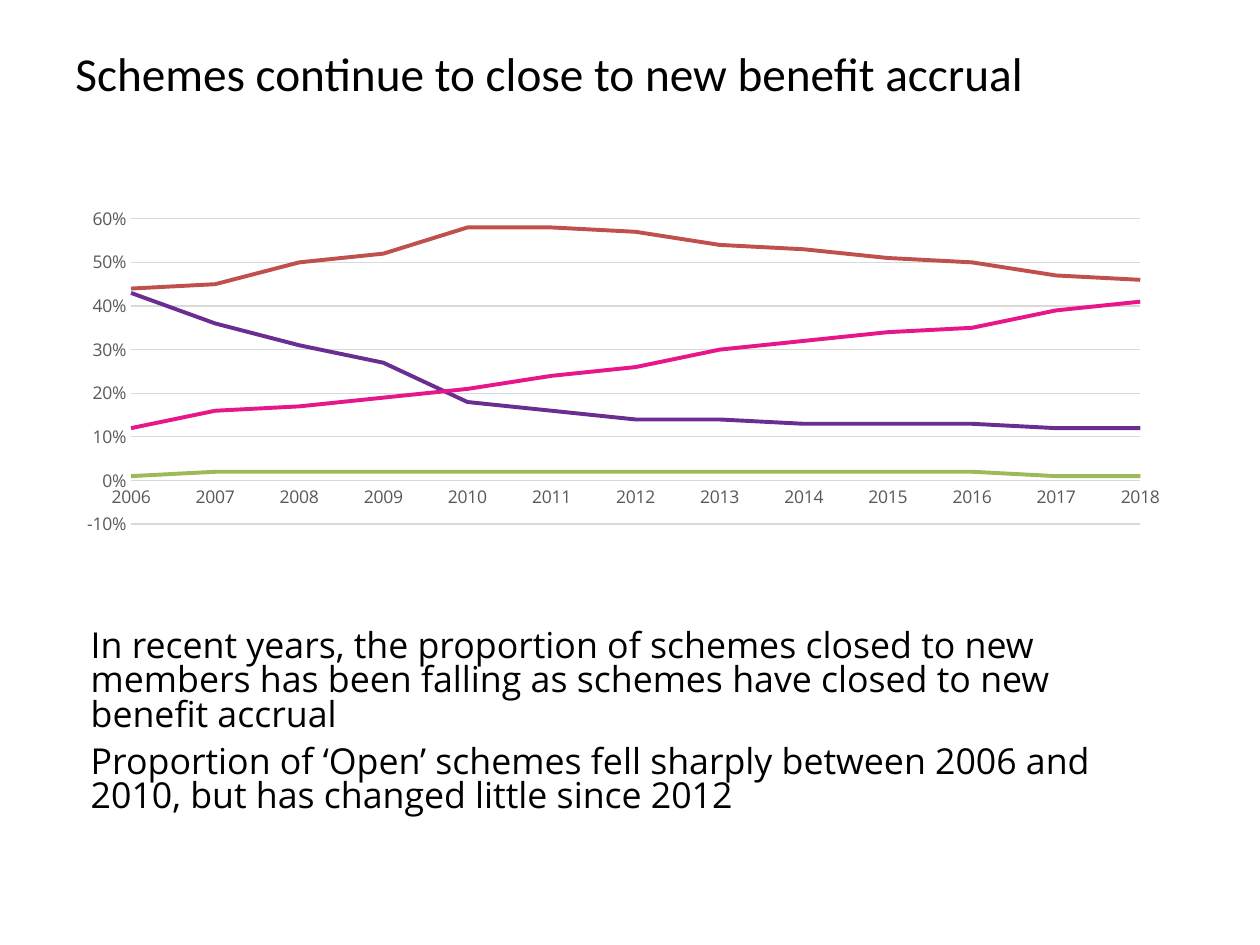
from lxml import etree
from pptx import Presentation
from pptx import util as u
from pptx.chart.data import CategoryChartData
from pptx.dml.color import RGBColor
from pptx.enum import chart as charts, text
from pptx.oxml.ns import qn


def colour(value):
    return RGBColor.from_string(value)


def assign(target, values):
    for name, value in values.items():
        setattr(target, name, value)


class Slide:
    columns, rows = 100, 75
    ink, label, rule = "000000", "595959", "D9D9D9"
    heading_font, body_font = "Calibri", "Open Sans"

    def __init__(self, deck):
        self.deck = deck
        self.page = deck.slides.add_slide(deck.slide_layouts[6])

    def area(self, column, row, width, height):
        across = self.deck.slide_width / self.columns
        down = self.deck.slide_height / self.rows
        return [round(n * unit) for n, unit in
                zip((column, row, width, height), (across, down, across, down))]

    def style_font(self, font, name, size, ink):
        assign(font, {"name": name, "size": u.Pt(size), "bold": False})
        font.color.rgb = colour(ink)

    def add_text(self, place, lines, font, size, frame_format, paragraph_format):
        frame = self.page.shapes.add_textbox(*self.area(*place)).text_frame
        assign(frame, {"word_wrap": True, "vertical_anchor": text.MSO_ANCHOR.TOP,
                       **frame_format})
        for index, line in enumerate(lines):
            para = frame.add_paragraph() if index else frame.paragraphs[0]
            assign(para, paragraph_format)
            if not index:
                para.space_before = u.Pt(0)
            span = para.add_run()
            span.text = line
            self.style_font(span.font, font, size, self.ink)

    def add_line_chart(self, place, categories, series, plot_layout):
        data = CategoryChartData(number_format="0%")
        data.categories = categories
        for index, values in enumerate(series.values(), 1):
            data.add_series(f"Series {index}", [v / 100 for v in values])
        chart = self.page.shapes.add_chart(
            charts.XL_CHART_TYPE.LINE, *self.area(*place), data).chart
        assign(chart, {"has_legend": False, "has_title": False})
        self.style_font(chart.font, self.body_font, 10, self.ink)
        for line, ink in zip(chart.plots[0].series, series):
            line.smooth = False
            line.marker.style = charts.XL_MARKER_STYLE.NONE
            self.style_line(line.format.line, ink, 2.25)
        chart.plots[0].vary_by_categories = False
        self.style_axes(chart)
        self.place_plot(chart, plot_layout)

    def style_line(self, line, ink, width):
        line.color.rgb = colour(ink)
        line.width = u.Pt(width)

    def style_axes(self, chart):
        for axis in (chart.category_axis, chart.value_axis):
            assign(axis, {"major_tick_mark": charts.XL_TICK_MARK.NONE,
                          "minor_tick_mark": charts.XL_TICK_MARK.NONE})
            self.style_font(axis.tick_labels.font, self.body_font, 10, self.label)
        self.style_line(chart.category_axis.format.line, self.rule, 0.75)
        values = chart.value_axis
        assign(values, {"minimum_scale": -0.1, "maximum_scale": 0.6,
                        "major_unit": 0.1, "has_major_gridlines": True})
        assign(values.tick_labels, {"number_format": "0%",
                                    "number_format_is_linked": False})
        values.format.line.fill.background()
        self.style_line(values.major_gridlines.format.line, self.rule, 0.75)
        axis_xml = chart._chartSpace.chart.plotArea.find(qn("c:valAx"))
        between = etree.Element(qn("c:crossBetween"), val="midCat")
        axis_xml.find(qn("c:crosses")).addnext(between)

    def place_plot(self, chart, plot_layout):
        area = chart._chartSpace.chart.plotArea
        for old in area.findall(qn("c:layout")):
            area.remove(old)
        layout = etree.Element(qn("c:layout"))
        manual = etree.SubElement(layout, qn("c:manualLayout"))
        settings = {"layoutTarget": "inner", "xMode": "edge", "yMode": "edge",
                    **dict(zip("xywh", plot_layout))}
        for name, value in settings.items():
            etree.SubElement(manual, qn(f"c:{name}")).set("val", str(value))
        area.insert(0, layout)


def main():
    deck = Presentation()
    assign(deck, {"slide_width": u.Inches(10), "slide_height": u.Inches(7.5)})
    slide = Slide(deck)
    slide.add_text((5, 3, 90, 12.5),
                   ["Schemes continue to close to new benefit accrual"],
                   slide.heading_font, 27, {}, {})
    slide.add_line_chart(
        (5, 15.5, 90, 37.3),
        [str(year) for year in range(2006, 2019)],
        {
            "6A2D91": (43, 36, 31, 27, 18, 16, 14, 14, 13, 13, 13, 12, 12),
            "C0504D": (44, 45, 50, 52, 58, 58, 57, 54, 53, 51, 50, 47, 46),
            "E7168A": (12, 16, 17, 19, 21, 24, 26, 30, 32, 34, 35, 39, 41),
            "9BBB59": (1, 2, 2, 2, 2, 2, 2, 2, 2, 2, 2, 1, 1),
        },
        (0.06, 0.05, 0.89, 0.65))
    slide.add_text(
        (7.2, 50.1, 85.2, 16.4),
        ["In recent years, the proportion of schemes closed to new members has "
         "been falling as schemes have closed to new benefit accrual",
         "Proportion of ‘Open’ schemes fell sharply between 2006 and 2010, "
         "but has changed little since 2012"],
        slide.body_font, 20.4,
        dict.fromkeys(("margin_left", "margin_top", "margin_right", "margin_bottom"), 0),
        {"line_spacing": 0.8, "space_before": u.Pt(7.5)})
    deck.save("out.pptx")


if __name__ == "__main__":
    main()
